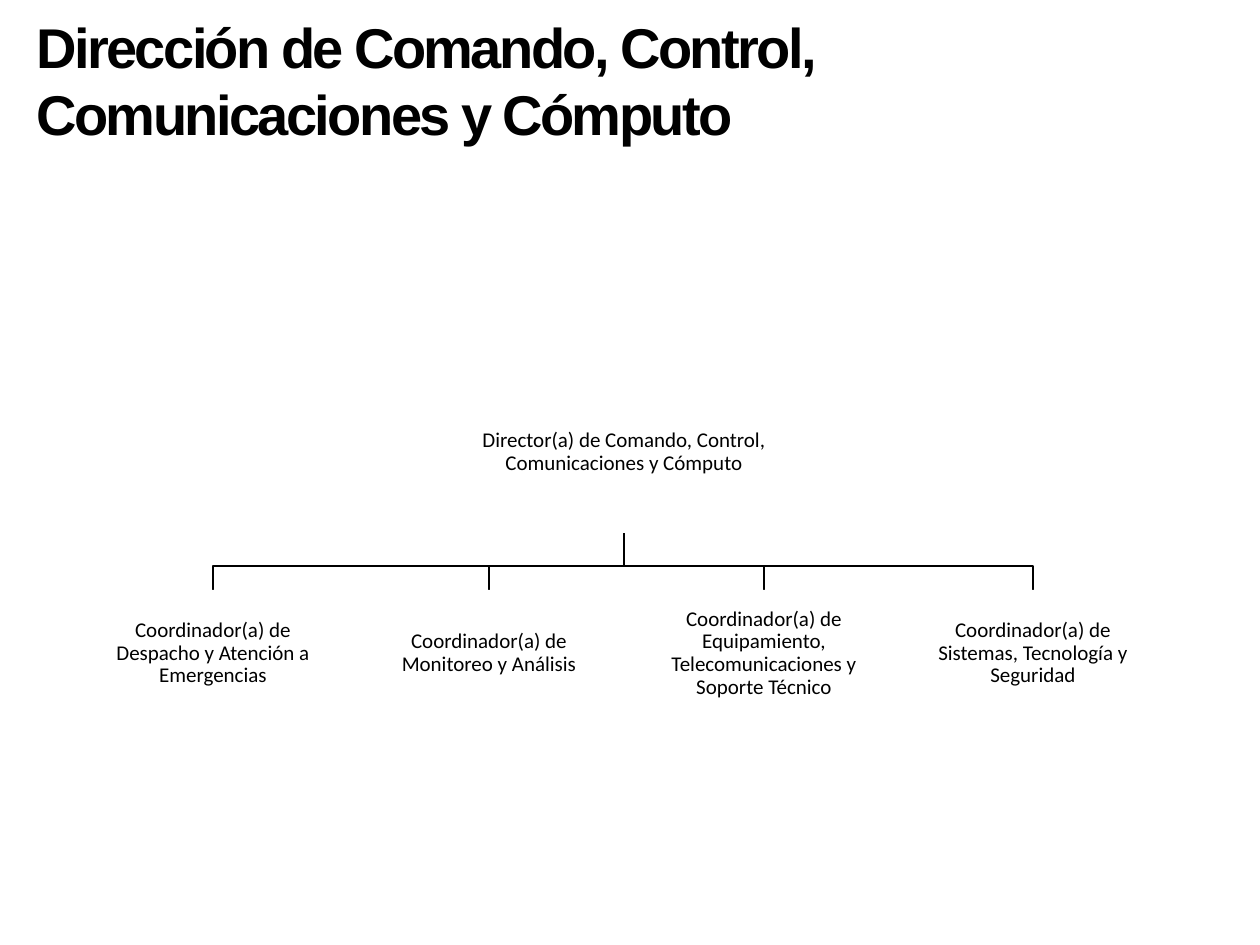
from pptx import Presentation, util as u
from pptx.dml.color import RGBColor
from pptx.enum import shapes, text

PX = u.Inches(1) / 126
BLACK, WHITE = "000000", "FFFFFF"

TITLE = "Dirección de Comando, Control, Comunicaciones y Cómputo"
DIRECTOR = "Director(a) de Comando, Control, Comunicaciones y Cómputo"
COORDINATORS = [  # (horizontal centre, post)
    (213, "Coordinador(a) de Despacho y Atención a Emergencias"),
    (489, "Coordinador(a) de Monitoreo y Análisis"),
    (764, "Coordinador(a) de Equipamiento, Telecomunicaciones y Soporte Técnico"),
    (1033, "Coordinador(a) de Sistemas, Tecnología y Seguridad"),
]
DIRECTOR_CENTRE, DIRECTOR_TOP = 624, 372
DIRECTOR_WIDTH, DIRECTOR_HEIGHT = 324, 161
POST_TOP, POST_WIDTH, POST_HEIGHT = 590, 226, 127
BRANCH_TOP, BRANCH_BEND = DIRECTOR_TOP + DIRECTOR_HEIGHT, 566


def emu(*lengths):
    return [round(length * PX) for length in lengths]


def color(value):
    return RGBColor.from_string(value)


def write(shape, words, size=12, font="Calibri", bold=False, tracking=None,
          align=text.PP_ALIGN.CENTER, anchor=text.MSO_ANCHOR.MIDDLE,
          line_spacing=0.9, inset=0.01):
    """Fill a shape with one paragraph; tracking is in points, inset in inches."""
    frame = shape.text_frame
    frame.word_wrap = True
    frame.vertical_anchor = anchor
    if inset is not None:
        frame.margin_left = frame.margin_right = u.Inches(inset)
        frame.margin_top = frame.margin_bottom = u.Inches(inset)
    paragraph = frame.paragraphs[0]
    paragraph.alignment = align
    paragraph.line_spacing = line_spacing
    run = paragraph.add_run()
    run.text = words
    run.font.size = u.Pt(size)
    run.font.name = font
    run.font.bold = bold
    run.font.color.rgb = color(BLACK)
    if tracking is not None:
        run.font._element.set("spc", str(round(tracking * 100)))


def add_branch(slide, centre):
    """Draw the elbow line from the director down to a post."""
    builder = slide.shapes.build_freeform(DIRECTOR_CENTRE, BRANCH_TOP, scale=PX)
    builder.add_line_segments(
        [(DIRECTOR_CENTRE, BRANCH_BEND), (centre, BRANCH_BEND), (centre, POST_TOP)],
        close=False)
    branch = builder.convert_to_shape()
    branch.shadow.inherit = False
    branch.fill.background()
    branch.line.color.rgb = color(BLACK)
    branch.line.width = u.Pt(1)


def add_post(slide, centre, words):
    post = slide.shapes.add_shape(
        shapes.MSO_SHAPE.RECTANGLE,
        *emu(centre - POST_WIDTH / 2, POST_TOP, POST_WIDTH, POST_HEIGHT))
    post.shadow.inherit = False
    post.fill.solid()
    post.fill.fore_color.rgb = color(WHITE)
    post.line.fill.background()
    write(post, words)


def main():
    deck = Presentation()
    deck.slide_width, deck.slide_height = emu(1260, 945)
    slide = deck.slides.add_slide(deck.slide_layouts[6])

    title = slide.shapes.add_textbox(*emu(24, 6, 940, 149))
    write(title, TITLE, size=32, font="Arial", bold=True, tracking=-1.5,
          align=text.PP_ALIGN.LEFT, anchor=text.MSO_ANCHOR.TOP,
          line_spacing=None, inset=None)
    title.text_frame.auto_size = text.MSO_AUTO_SIZE.SHAPE_TO_FIT_TEXT

    for centre, _ in reversed(COORDINATORS):
        add_branch(slide, centre)
    director = slide.shapes.add_textbox(
        *emu(DIRECTOR_CENTRE - DIRECTOR_WIDTH / 2, DIRECTOR_TOP,
             DIRECTOR_WIDTH, DIRECTOR_HEIGHT))
    write(director, DIRECTOR)
    for centre, words in COORDINATORS:
        add_post(slide, centre, words)

    deck.save("out.pptx")


if __name__ == "__main__":
    main()
